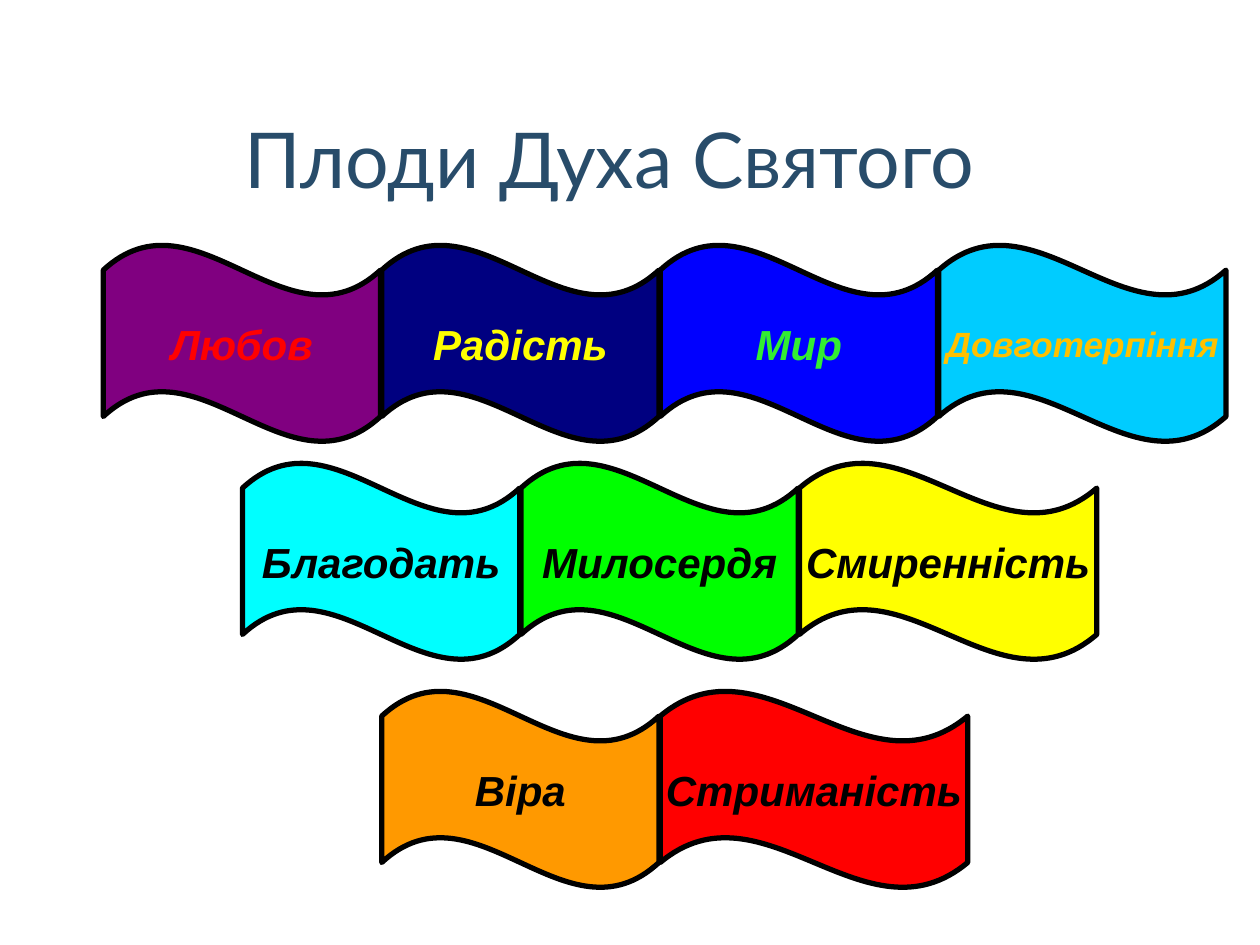
from pptx import Presentation
from pptx.dml.color import RGBColor as RGB
from pptx.enum.shapes import MSO_SHAPE as Shape
from pptx.enum.text import MSO_ANCHOR as Anchor, PP_ALIGN as Align
from pptx.util import Inches, Pt

# Colours
SLATE = RGB(0x28, 0x4C, 0x6A)
BLACK = RGB(0, 0, 0)
RED = RGB(0xFF, 0, 0)
YELLOW = RGB(0xFF, 0xFF, 0)
LEAF = RGB(0x32, 0xEE, 0x32)
GOLD = RGB(0xFF, 0xC0, 0)
PURPLE = RGB(0x80, 0, 0x80)
NAVY = RGB(0, 0, 0x80)
BLUE = RGB(0, 0, 0xFF)
SKY = RGB(0, 0xCC, 0xFF)
CYAN = RGB(0, 0xFF, 0xFF)
GREEN = RGB(0, 0xFF, 0)
ORANGE = RGB(0xFF, 0x99, 0)

# Flag grid: each row starts half a step further right
LEFT, STEP = 0.82, 2.21
WIDTH, HEIGHT = 2.2, 1.57

# Rows: top, then flags as word, fill, ink, width, size
ROWS = [
    (1.94, [
        ("Любов", PURPLE, RED, WIDTH, 24),
        ("Радість", NAVY, YELLOW, WIDTH, 24),
        ("Мир", BLUE, LEAF, WIDTH, 24),
        ("Довготерпіння", SKY, GOLD, 2.28, 20),
    ]),
    (3.67, [
        ("Благодать", CYAN, BLACK, WIDTH, 24),
        ("Милосердя", GREEN, BLACK, WIDTH, 24),
        ("Смиренність", YELLOW, BLACK, 2.36, 24),
    ]),
    (5.48, [
        ("Віра", ORANGE, BLACK, WIDTH, 24),
        ("Стриманість", RED, BLACK, 2.44, 24),
    ]),
]


def write(shape, text, *, size, color, font="Arial", bold=False,
          italic=False, wrap=False):
    frame = shape.text_frame
    frame.word_wrap = wrap
    frame.vertical_anchor = Anchor.MIDDLE
    para = frame.paragraphs[0]
    para.alignment = Align.CENTER
    run = para.add_run()
    run.text = text
    face = run.font
    face.name, face.size = font, Pt(size)
    face.bold, face.italic = bold, italic
    face.color.rgb = color


def add_title(slide, text):
    box = slide.shapes.add_textbox(
        Inches(0.5), Inches(0.75), Inches(8.83), Inches(1))
    write(box, text, size=44, color=SLATE, font="Lato", wrap=True)


def add_flag(slide, left, top, word, fill, ink, width, size):
    flag = slide.shapes.add_shape(
        Shape.WAVE, Inches(left), Inches(top), Inches(width), Inches(HEIGHT))
    flag.adjustments[0] = 0.13
    flag.adjustments[1] = 0
    flag.shadow.inherit = False
    flag.fill.solid()
    flag.fill.fore_color.rgb = fill
    flag.line.color.rgb = BLACK
    flag.line.width = Pt(3)
    write(flag, word, size=size, color=ink, bold=True, italic=True)


def main():
    deck = Presentation()
    deck.slide_width, deck.slide_height = Inches(10), Inches(7.5)
    slide = deck.slides.add_slide(deck.slide_layouts[6])

    add_title(slide, "Плоди Духа Святого ")

    # Three rows of flags
    for row, (top, flags) in enumerate(ROWS):
        for col, flag in enumerate(flags):
            left = LEFT + STEP * (col + row / 2)
            add_flag(slide, left, top, *flag)

    deck.save("out.pptx")


if __name__ == "__main__":
    main()
